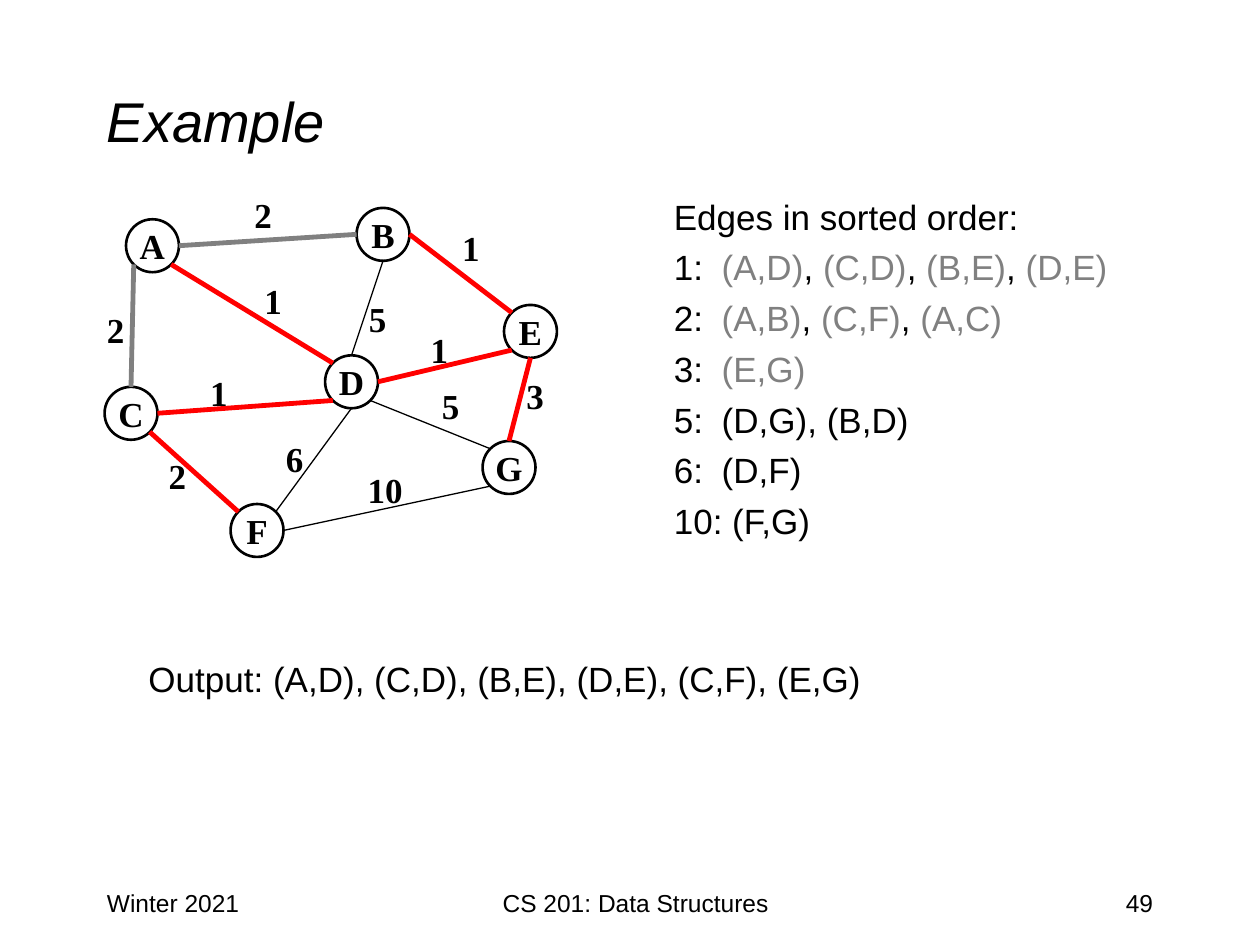
"""Build the minimum spanning tree example slide."""
from math import cos, radians, sin

from lxml.etree import SubElement
from pptx import Presentation
from pptx.dml.color import RGBColor
from pptx.enum.shapes import MSO_CONNECTOR as Connector, MSO_SHAPE as Shape
from pptx.enum.text import MSO_ANCHOR as Anchor, PP_ALIGN as Align
from pptx.oxml.ns import qn
from pptx.util import Inches, Pt

COLORS = {"black": "000000", "gray": "808080", "red": "FF0000"}
SANS, SERIF = "Arial", "Times New Roman"
DIAMETER = 0.42
INDENT = 0.38

NODES = {
    "A": (1, 1.74), "B": (2.83, 1.65), "C": (0.83, 3.07), "D": (2.58, 2.82),
    "F": (1.83, 4), "E": (4, 2.42), "G": (3.83, 3.5),
}
ANGLES = {
    "right": 0, "bottom right": 45, "bottom": 90, "bottom left": 135,
    "left": 180, "top left": 225, "top": 270,  "top right": 315,
}
WIDTHS = {"black": 0.75, "gray": 2.75, "red": 2.75}
EDGES = [
    ("A", "bottom left", "C", "top", "gray", "2", (0.75, 2.4)),
    ("B", "left", "A", "right", "gray", "2", (1.92, 1.49)),
    ("D", "top", "B", "bottom", "black", "5", (2.83, 2.31)),
    ("A", "bottom right", "D", "top left", "red", "1", (2, 2.17)),
    ("C", "right", "D", "bottom left", "red", "1", (1.57, 2.9)),
    ("D", "right", "E", "bottom left", "red", "1", (3.32, 2.56)),
    ("E", "top left", "B", "right", "red", "1", (3.57, 1.75)),
    ("C", "bottom right", "F", "top left", "red", "2", (1.24, 3.56)),
    ("D", "bottom", "F", "top right", "black", "6", (2.17, 3.42)),
    ("D", "bottom right", "G", "top left", "black", "5", (3.41, 3)),
    ("G", "top", "E", "bottom", "red", "3", (4.08, 2.92)),
    ("F", "right", "G", "bottom left", "black", "10", (2.82, 3.67)),
]
SORTED_EDGES = [
    ("1:\t", ["(A,D)", "(C,D)", "(B,E)", "(D,E)"], "gray"),
    ("2:\t", ["(A,B)", "(C,F)", "(A,C)"], "gray"),
    ("3:\t", ["(E,G)"], "gray"),
    ("5:\t", ["(D,G)", "(B,D)"], "black"),
    ("6:\t", ["(D,F)"], "black"),
    ("10: ", ["(F,G)"], "black"),
]
OUTPUT = "Output: (A,D), (C,D), (B,E), (D,E), (C,F), (E,G)"
FOOTERS = [
    ("Winter 2021", (0.75, 7, 2.08, 0.5), Align.LEFT),
    ("49", (7.17, 7, 2.08, 0.5), Align.RIGHT),
    ("CS 201: Data Structures", (3.17, 7, 3.75, 0.5), Align.CENTER),
]


def rgb(name):
    return RGBColor.from_string(COLORS[name])


def write(shape, lines, size=20, font=SANS, bold=False, italic=False,
          align=Align.LEFT, anchor=Anchor.TOP, wrap=True, hanging=False):
    frame = shape.text_frame
    frame.word_wrap = wrap
    frame.vertical_anchor = anchor
    for index, line in enumerate(lines):
        para = frame.add_paragraph() if index else frame.paragraphs[0]
        para.alignment = align
        if hanging:
            para.space_before = Pt(5 if index else 2)
            properties = para._p.get_or_add_pPr()
            properties.set("marL", str(Inches(INDENT)))
            properties.set("indent", str(Inches(-INDENT)))
        for text, color in line:
            span = para.add_run()
            span.text = text
            span.font.size = Pt(size)
            span.font.name = font
            span.font.bold = bold
            span.font.italic = italic
            span.font.color.rgb = rgb(color)


def add_text(page, area, lines, **style):
    if isinstance(lines, str):
        lines = [[(lines, "black")]]
    box = page.shapes.add_textbox(*map(Inches, area))
    write(box, lines, **style)


def add_node(page, name, corner):
    left, top = map(Inches, corner)
    node = page.shapes.add_shape(
        Shape.OVAL, left, top, Inches(DIAMETER), Inches(DIAMETER))
    node.shadow.inherit = False
    node.fill.background()
    node.line.color.rgb = rgb("black")
    node.line.width = Pt(1.5)
    write(node, [[(name, "black")]], font=SERIF, bold=True,
          align=Align.CENTER, anchor=Anchor.MIDDLE, wrap=False)


def rim_point(name, side):
    left, top = NODES[name]
    radius, angle = DIAMETER / 2, radians(ANGLES[side])
    return (Inches(left + radius + radius * cos(angle)),
            Inches(top + radius + radius * sin(angle)))


def add_edge(page, start, start_side, end, end_side, color):
    edge = page.shapes.add_connector(
        Connector.STRAIGHT, *rim_point(start, start_side), *rim_point(end, end_side))
    edge.line.color.rgb = rgb(color)
    edge.line.width = Pt(WIDTHS[color])
    SubElement(edge._element.spPr, qn("a:effectLst"))


def sorted_line(weight, pairs, color):
    line = [(weight, "black")]
    for index, pair in enumerate(pairs):
        if index:
            line.append((", ", "black"))
        line.append((pair, color))
    return line


def main():
    deck = Presentation()
    deck.slide_width, deck.slide_height = Inches(10), Inches(7.5)
    page = deck.slides.add_slide(deck.slide_layouts[6])

    add_text(page, (0.75, 0.33, 8.5, 1.25), "Example",
             size=32, italic=True, anchor=Anchor.MIDDLE)
    for text, area, align in FOOTERS:
        add_text(page, area, text, size=14, align=align)

    for name, corner in NODES.items():
        add_node(page, name, corner)
    for *ends, color, weight, corner in EDGES:
        add_edge(page, *ends, color)
        width = 0.2 + 0.14 * len(weight)
        add_text(page, (*corner, width, 0.44), weight,
                 font=SERIF, bold=True, wrap=False)

    lines = [[("Edges in sorted order:", "black")]]
    lines += [sorted_line(*entry) for entry in SORTED_EDGES]
    add_text(page, (5.25, 1.5, 4, 3.08), lines, hanging=True)
    add_text(page, (1.08, 5.17, 7.75, 0.58), OUTPUT, hanging=True)
    deck.save("out.pptx")


if __name__ == "__main__":
    main()
